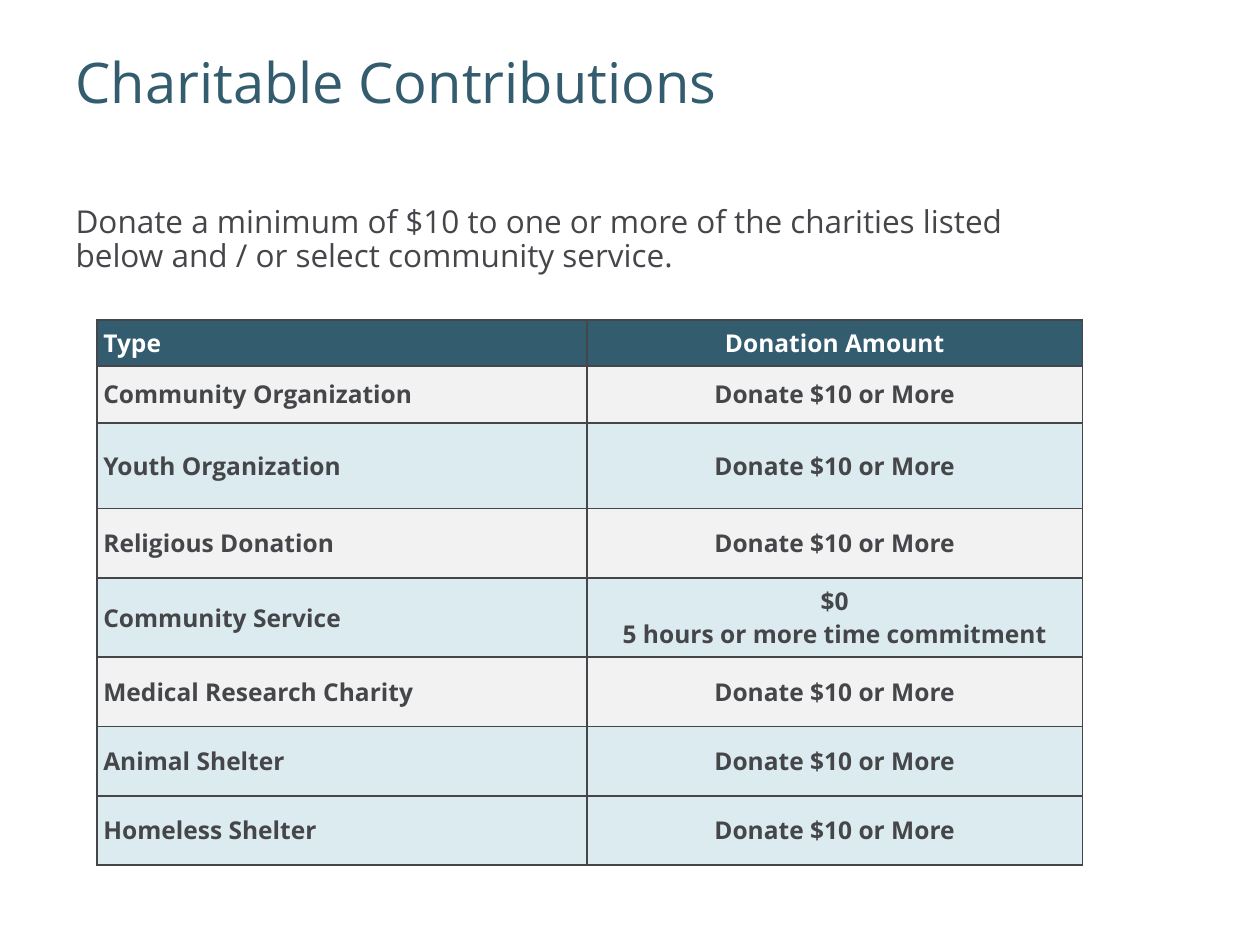
from lxml import etree
from pptx import Presentation
from pptx.dml.color import RGBColor
from pptx.enum import text
from pptx.oxml import ns
from pptx.util import Inches, Pt

FONT = "Open Sans"
COLORS = {
    "teal": "345C6F",
    "ink": "44464A",
    "white": "FFFFFF",
    "gray": "F2F2F2",
    "ice": "DCEBEF",
}
DONATE = "Donate $10 or More"
ROWS = [
    ("Type", "Donation Amount", 0.34, "teal"),
    ("Community Organization", DONATE, 0.45, "gray"),
    ("Youth Organization", DONATE, 0.68, "ice"),
    ("Religious Donation", DONATE, 0.55, "gray"),
    ("Community Service", "$0\n5 hours or more time commitment", 0.55, "ice"),
    ("Medical Research Charity", DONATE, 0.55, "gray"),
    ("Animal Shelter", DONATE, 0.55, "ice"),
    ("Homeless Shelter", DONATE, 0.55, "ice"),
]
COLUMN_WIDTHS = (3.89, 3.93)


def rgb(name):
    return RGBColor.from_string(COLORS[name])


def set_margins(holder, inset):
    holder.margin_left = holder.margin_right = Inches(inset)
    holder.margin_top = holder.margin_bottom = Inches(inset)


def write(frame, content, size, color, bold=False, align=text.PP_ALIGN.LEFT):
    frame.text = content
    for paragraph in frame.paragraphs:
        paragraph.alignment = align
        for run in paragraph.runs:
            run.font.name = FONT
            run.font.size = Pt(size)
            run.font.bold = bold
            run.font.color.rgb = rgb(color)


def write_block(block, content, size, color, anchor, spacing):
    frame = block.text_frame
    frame.word_wrap = True
    frame.auto_size = text.MSO_AUTO_SIZE.NONE
    frame.vertical_anchor = anchor
    set_margins(frame, 0)
    write(frame, content, size, color)
    frame.paragraphs[0].line_spacing = spacing


def add_title(slide):
    title = slide.shapes.title
    title.left, title.top = Inches(0.6), Inches(0.35)
    title.width, title.height = Inches(9), Inches(1.25)
    write_block(title, "Charitable Contributions", 32, "teal",
                text.MSO_ANCHOR.TOP, 1.05)


def add_intro(slide):
    intro = slide.shapes.add_textbox(
        Inches(0.6), Inches(1.44), Inches(7.46), Inches(0.94))
    write_block(
        intro,
        "Donate a minimum of $10 to one or more of the charities listed "
        "below and / or select community service.",
        18, "ink", text.MSO_ANCHOR.MIDDLE, 0.9)
    intro.text_frame.paragraphs[0].space_after = Pt(12)


def add_borders(cell):
    properties = cell._tc.get_or_add_tcPr()
    for position, side in enumerate(("lnL", "lnR", "lnT", "lnB")):
        border = etree.Element(ns.qn(f"a:{side}"), w=str(Pt(1)))
        fill = etree.SubElement(border, ns.qn("a:solidFill"))
        etree.SubElement(fill, ns.qn("a:srgbClr"), val=COLORS["ink"])
        properties.insert(position, border)


def format_cell(cell, content, fill, align):
    cell.fill.solid()
    cell.fill.fore_color.rgb = rgb(fill)
    cell.vertical_anchor = text.MSO_ANCHOR.MIDDLE
    set_margins(cell, 0.05)
    color = "white" if fill == "teal" else "ink"
    write(cell.text_frame, content, 14, color, True, align)
    add_borders(cell)


def add_donations(slide):
    height = sum(row[2] for row in ROWS)
    donations = slide.shapes.add_table(
        len(ROWS), len(COLUMN_WIDTHS), Inches(0.77), Inches(2.54),
        Inches(sum(COLUMN_WIDTHS)), Inches(height)).table
    for column, width in zip(donations.columns, COLUMN_WIDTHS):
        column.width = Inches(width)
    for index, (kind, amount, row_height, fill) in enumerate(ROWS):
        donations.rows[index].height = Inches(row_height)
        format_cell(donations.cell(index, 0), kind, fill, text.PP_ALIGN.LEFT)
        format_cell(donations.cell(index, 1), amount, fill, text.PP_ALIGN.CENTER)


def main():
    deck = Presentation()
    deck.slide_width, deck.slide_height = Inches(10), Inches(7.5)
    slide = deck.slides.add_slide(deck.slide_layouts[5])
    add_title(slide)
    add_intro(slide)
    add_donations(slide)
    deck.save("out.pptx")


if __name__ == "__main__":
    main()
